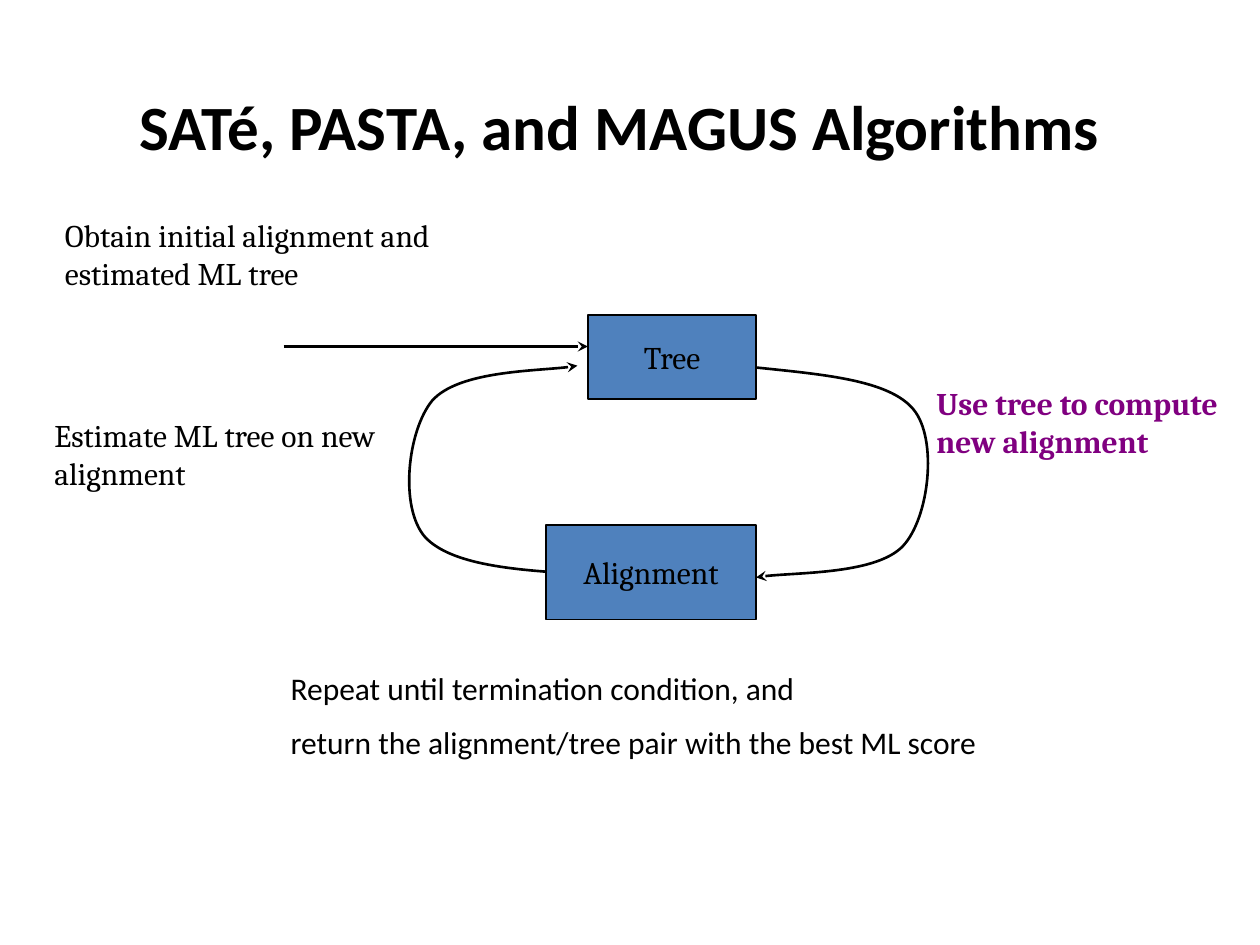
import lxml.etree
import pptx
import pptx.dml.color
import pptx.enum.shapes
import pptx.enum.text
import pptx.oxml.ns
import pptx.util

Pt = pptx.util.Pt
RGBColor = pptx.dml.color.RGBColor
ALIGN = pptx.enum.text.PP_ALIGN
ANCHOR = pptx.enum.text.MSO_ANCHOR
qn = pptx.oxml.ns.qn

BLACK = RGBColor(0x00, 0x00, 0x00)
BLUE = RGBColor(0x4F, 0x81, 0xBD)
PURPLE = RGBColor(0x80, 0x00, 0x80)


def write(shape, text, font="Cambria", size=18, color=BLACK, bold=False,
          align=ALIGN.LEFT, gap=9):
    """Fill a shape with text, one paragraph per line, set apart by gap."""
    frame = shape.text_frame
    frame.text = text
    for index, para in enumerate(frame.paragraphs):
        para.alignment = align
        para.space_before = Pt(gap if index else 0)
        for span in para.runs:
            span.font.name = font
            span.font.size = Pt(size)
            span.font.bold = bold
            span.font.color.rgb = color


def add_label(page, box, text, **style):
    label = page.shapes.add_textbox(*map(Pt, box))
    label.text_frame.word_wrap = True
    write(label, text, **style)
    return label


def add_node(page, box, text):
    node = page.shapes.add_shape(
        pptx.enum.shapes.MSO_SHAPE.RECTANGLE, *map(Pt, box))
    node.shadow.inherit = False
    node.fill.solid()
    node.fill.fore_color.rgb = BLUE
    node.line.color.rgb = BLACK
    node.line.width = Pt(0.75)
    node.text_frame.word_wrap = False
    node.text_frame.vertical_anchor = ANCHOR.MIDDLE
    write(node, text, align=ALIGN.CENTER)


def style_arrow(arrow):
    arrow.line.color.rgb = BLACK
    arrow.line.width = Pt(1.5)
    outline = arrow.line._get_or_add_ln()
    lxml.etree.SubElement(outline, qn("a:tailEnd"), type="stealth")


def add_curved_arrow(page, left, top, points):
    """Draw a start point followed by Bezier triples, relative to left, top."""
    builder = page.shapes.build_freeform(*points[0], scale=Pt(1))
    builder.add_line_segments(points[1:], close=False)
    curve = builder.convert_to_shape(Pt(left), Pt(top))
    curve.shadow.inherit = False
    curve.fill.background()
    style_arrow(curve)
    # Regroup the straight segments as cubic curves
    segments = list(curve._element.iter(qn("a:lnTo")))
    outline = segments[0].getparent()
    for start in range(0, len(segments), 3):
        cubic = lxml.etree.SubElement(outline, qn("a:cubicBezTo"))
        for segment in segments[start:start + 3]:
            cubic.append(segment[0])
            outline.remove(segment)


def place_title(page, box):
    title = add_label(page, box, "SATé, PASTA, and MAGUS Algorithms",
                      font="Calibri", size=36, bold=True, align=ALIGN.CENTER)
    title.text_frame.vertical_anchor = ANCHOR.MIDDLE


def place_start(page, box):
    """Initial step: a label above the arrow that leads into the cycle."""
    left, top, width, height = box
    add_label(page, (left, top, 264, 65),
              "Obtain initial alignment and estimated ML tree")
    arrow = page.shapes.add_connector(
        pptx.enum.shapes.MSO_CONNECTOR.STRAIGHT,
        Pt(left + 132), Pt(top + height), Pt(left + width), Pt(top + height))
    style_arrow(arrow)
    lxml.etree.SubElement(arrow._element.spPr, qn("a:effectLst"))


def place_cycle(page, box):
    """Tree and alignment nodes joined by two curved arrows."""
    left, top, width, height = box
    # Alignment back to tree
    add_curved_arrow(page, left, top, [
        (309, 148), (271, 146), (234, 143), (219, 127), (204, 110),
        (209, 66), (223, 49), (238, 32), (291, 32), (306, 29)])
    add_label(page, (left, top + 54, 216, 65),
              "Estimate ML tree on new alignment")
    # Tree to alignment
    add_curved_arrow(page, left, top, [
        (408, 30), (446, 34), (484, 37), (498, 54), (512, 71),
        (507, 116), (492, 132), (477, 148), (423, 147), (408, 150)])
    add_label(page, (left + width - 192, top + 36, 192, 94),
              "Use tree to compute new alignment", color=PURPLE, bold=True)
    # Nodes share their right edge
    right = left + 408
    add_node(page, (right - 96, top, 96, 48), "Tree")
    add_node(page, (right - 120, top + height - 54, 120, 54), "Alignment")


def place_note(page, box):
    add_label(page, box, "Repeat until termination condition, and\n"
              "return the alignment/tree pair with the best ML score",
              font="Calibri")


def main():
    deck = pptx.Presentation()
    deck.slide_width, deck.slide_height = Pt(720), Pt(540)
    page = deck.slides.add_slide(deck.slide_layouts[6])
    place_title(page, (55, 31, 598, 81))
    place_cycle(page, (24, 180, 696, 174))
    place_start(page, (30, 120, 306, 78))
    place_note(page, (159, 379, 418, 62))
    deck.save("out.pptx")


if __name__ == "__main__":
    main()
